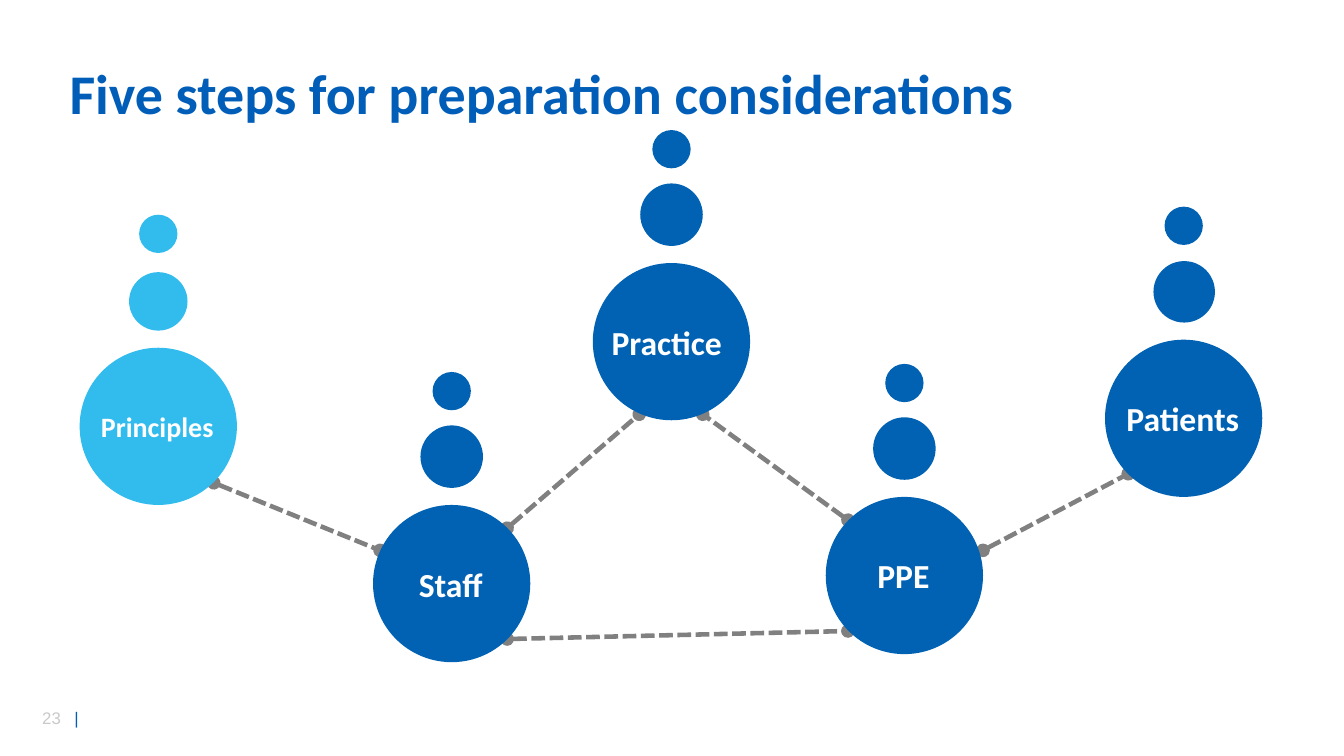
from pptx import Presentation
from pptx.dml.color import RGBColor
from pptx.enum.dml import MSO_LINE
from pptx.enum.shapes import MSO_CONNECTOR, MSO_SHAPE
from pptx.enum.text import MSO_ANCHOR as ANCHOR, MSO_AUTO_SIZE as FIT, PP_ALIGN as ALIGN
from pptx.oxml.ns import qn
from pptx.util import Pt
from lxml.etree import SubElement

PX = 9144  # 100 px to the inch
BLUE, SKY, NAVY = "0161B3", "32BCEE", "005EB8"
WHITE, GREY, PALE = "FFFFFF", "808080", "C9C9C9"
BIG, SMALL, GAP, RISE = 156, 38, 17, 132

# label, centre x, top of the big circle, middle circle size, colour, text size
STEPS = [
    ("Principles", 157, 345, 58, SKY, 20),
    ("Staff", 448, 501, 62, BLUE, 24),
    ("Practice ", 666, 261, 62, BLUE, 24),
    ("PPE", 897, 493, 62, BLUE, 24),
    ("Patients", 1174, 337, 61, BLUE, 24),
]
LINKS = [
    (212, 479, 377, 546),
    (503, 634, 841, 626),
    (975, 546, 1119, 470),
    (503, 524, 634, 411),
    (841, 516, 697, 411),
]


def px(*nums):
    return [n * PX for n in nums]


def rgb(code):
    return RGBColor.from_string(code)


def style(font, color, **form):
    font.color.rgb = rgb(color)
    for key, value in form.items():
        setattr(font, key, value)


def add_text(shapes, box, align=ALIGN.LEFT):
    """Add an empty text box; return its paragraph."""
    frame = shapes.add_textbox(*px(*box)).text_frame
    form = dict(word_wrap=True, auto_size=FIT.NONE, vertical_anchor=ANCHOR.MIDDLE)
    for key, value in form.items():
        setattr(frame, key, value)
    para = frame.paragraphs[0]
    para.alignment = align
    return para


def add_run(para, text, color, **form):
    run = para.add_run()
    run.text = text
    style(run.font, color, **form)


def add_dot(shapes, mid, top, size, color):
    dot = shapes.add_shape(MSO_SHAPE.OVAL, *px(mid - size // 2, top, size, size))
    dot.shadow.inherit = False
    dot.fill.solid()
    dot.fill.fore_color.rgb = rgb(color)
    dot.line.fill.background()


def add_step(slide, label, mid, top, size, color, points):
    shapes = slide.shapes.add_group_shape().shapes
    add_dot(shapes, mid, top, BIG, color)
    add_dot(shapes, mid, top - GAP - size, size, color)
    add_dot(shapes, mid, top - RISE, SMALL, color)
    para = add_text(shapes, (mid - 72, top + 53, 142, 50), ALIGN.CENTER)
    add_run(para, label, WHITE, name="Calibri", size=Pt(points), bold=True)


def add_link(slide, ends):
    link = slide.shapes.add_connector(MSO_CONNECTOR.STRAIGHT, *px(*ends))
    line = link.line
    line.color.rgb = rgb(GREY)
    line.width = Pt(3.25)
    line.dash_style = MSO_LINE.SQUARE_DOT
    props = link.element.spPr
    for end in ("a:headEnd", "a:tailEnd"):
        SubElement(props.find(qn("a:ln")), qn(end), type="oval")
    SubElement(props, qn("a:effectLst"))


def add_title(slide, text):
    title = slide.shapes.title
    title.left, title.top, title.width, title.height = px(59, 23, 1150, 145)
    frame = title.text_frame
    frame.auto_size = FIT.NONE
    frame.vertical_anchor = ANCHOR.MIDDLE
    para = frame.paragraphs[0]
    para.alignment = ALIGN.LEFT
    para.line_spacing = 0.9
    add_run(para, text, NAVY, name="Calibri", size=Pt(40), bold=True)


def add_number(slide, text):
    """Add the page number, with a bar at a tab stop."""
    para = add_text(slide.shapes, (32, 697, 71, 30))
    tabs = SubElement(para._p.get_or_add_pPr(), qn("a:tabLst"))
    SubElement(tabs, qn("a:tab"), pos=str(32 * PX), algn="l")
    form = dict(name="Arial", size=Pt(12))
    add_run(para, text + "\t", PALE, **form)
    add_run(para, "|", NAVY, **form)


def main():
    deck = Presentation()
    deck.slide_width, deck.slide_height = px(1333, 750)
    slide = deck.slides.add_slide(deck.slide_layouts[5])
    add_number(slide, "23")
    for ends in LINKS:
        add_link(slide, ends)
    for step in STEPS:
        add_step(slide, *step)
    add_title(slide, "Five steps for preparation considerations")
    deck.save("out.pptx")


if __name__ == "__main__":
    main()
